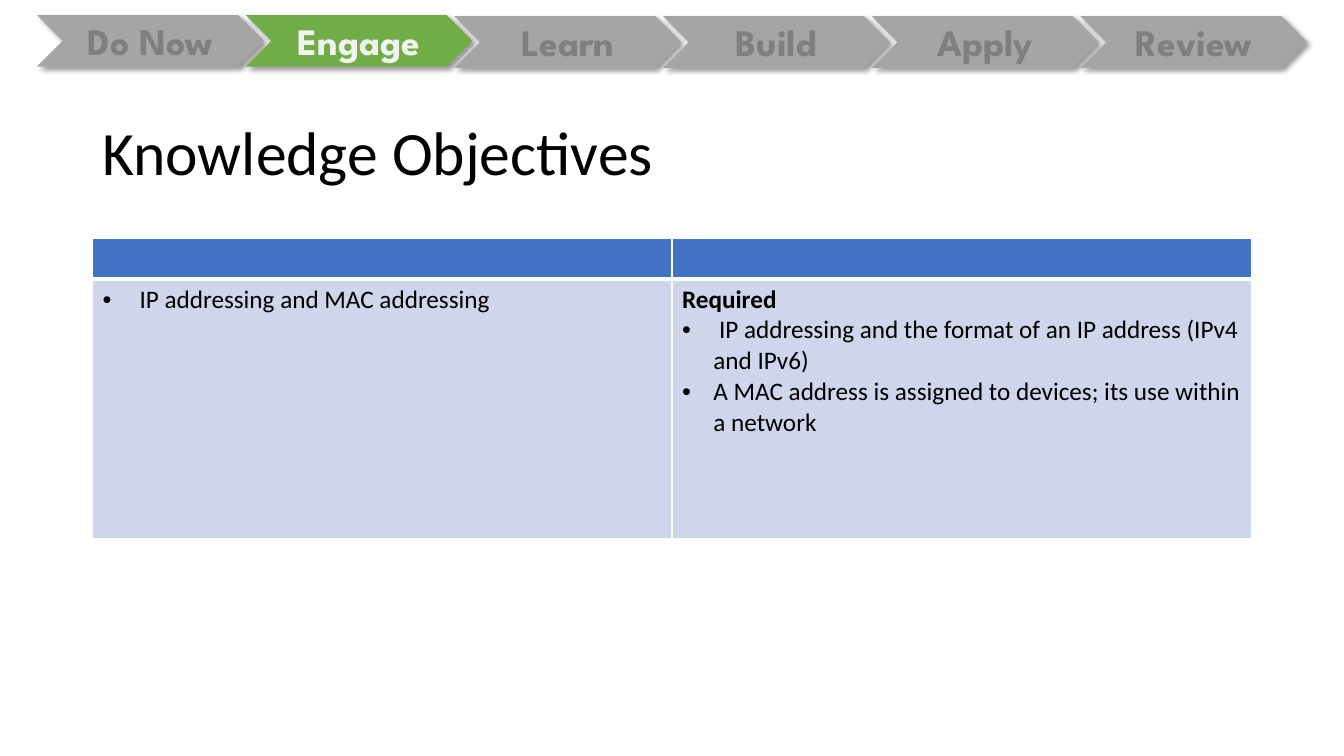
import pptx
import pptx.dml.color
import pptx.enum.shapes
import pptx.enum.text
import pptx.oxml
import pptx.oxml.ns
import pptx.util
from pptx.util import Cm

STAGES = ["Do Now", "Engage", "Learn", "Build", "Apply", "Review"]
CURRENT_STAGE = "Engage"
OBJECTIVES = [" IP addressing and MAC addressing"]
REQUIRED = [
    " IP addressing and the format of an IP address (IPv4 and IPv6)",
    "A MAC address is assigned to devices; its use within a network",
]
NAMESPACE = pptx.oxml.ns.nsdecls("a")


def color(value):
    return pptx.dml.color.RGBColor.from_string(value)


def style_paragraph(paragraph, size, value="000000", name="Calibri", bold=False):
    font = paragraph.font
    font.name, font.size, font.bold = name, pptx.util.Pt(size), bold
    font.color.rgb = color(value)


def add_shadow(shape):
    """Soft shadow cast down and to the right."""
    shape.shadow.inherit = False
    effects = shape._element.spPr.find(pptx.oxml.ns.qn("a:effectLst"))
    effects.append(pptx.oxml.parse_xml(
        f'<a:outerShdw {NAMESPACE} blurRad="50800" dist="38100" dir="2700000" algn="tl" '
        'rotWithShape="0"><a:srgbClr val="000000"><a:alpha val="40000"/></a:srgbClr>'
        '</a:outerShdw>'))


def add_stage(page, label, left, top, current):
    chevron = page.shapes.add_shape(
        pptx.enum.shapes.MSO_SHAPE.CHEVRON, left, top, Cm(5.72), Cm(1.3))
    chevron.fill.solid()
    chevron.fill.fore_color.rgb = color("70AD47" if current else "A5A5A5")
    chevron.line.fill.background()
    add_shadow(chevron)
    frame = chevron.text_frame
    frame.vertical_anchor = pptx.enum.text.MSO_ANCHOR.MIDDLE
    para = frame.paragraphs[0]
    para.text = label
    para.alignment = pptx.enum.text.PP_ALIGN.CENTER
    style_paragraph(para, 26.7, "F2F2F2" if current else "7F7F7F", "League Spartan", True)


def add_title(page, text):
    box = page.shapes.add_textbox(Cm(2.33), Cm(2.08), Cm(29.21), Cm(3.68))
    frame = box.text_frame
    frame.word_wrap = True
    frame.vertical_anchor = pptx.enum.text.MSO_ANCHOR.MIDDLE
    para = frame.paragraphs[0]
    para.text = text
    para.line_spacing = 0.9
    style_paragraph(para, 44)


def style_cell(cell, fill, top_width, bottom_width):
    cell.fill.solid()
    cell.fill.fore_color.rgb = color(fill)
    properties = cell._tc.get_or_add_tcPr()
    # Borders come before the fill
    widths = {"L": 1, "R": 1, "T": top_width, "B": bottom_width}
    for position, (side, width) in enumerate(widths.items()):
        properties.insert(position, pptx.oxml.parse_xml(
            f'<a:ln{side} {NAMESPACE} w="{pptx.util.Pt(width)}"><a:solidFill>'
            f'<a:srgbClr val="FFFFFF"/></a:solidFill></a:ln{side}>'))


def add_bullet(para):
    properties = para._p.get_or_add_pPr()
    indent = Cm(0.79)
    properties.set("marL", str(indent))
    properties.set("indent", str(-indent))
    properties.append(pptx.oxml.parse_xml(
        f'<a:buFont {NAMESPACE} typeface="Arial"/>'))
    properties.append(pptx.oxml.parse_xml(f'<a:buChar {NAMESPACE} char="•"/>'))


def fill_cell(cell, bullets, heading=None):
    lines = ([heading] if heading else []) + bullets
    frame = cell.text_frame
    for number, line in enumerate(lines):
        para = frame.add_paragraph() if number else frame.paragraphs[0]
        para.text = line
        if line != heading:
            add_bullet(para)
        style_paragraph(para, 18, bold=line == heading)


def add_objectives_table(page):
    row_heights = [Cm(1.03), Cm(6.54)]
    frame = page.shapes.add_table(2, 2, Cm(2.33), Cm(6), Cm(29.21), sum(row_heights))
    table = frame.table
    for row, height in zip(table.rows, row_heights):
        row.height = height
    for column in range(2):
        style_cell(table.cell(0, column), "4472C4", 1, 3)
        style_cell(table.cell(1, column), "CFD5EA", 3, 1)
    fill_cell(table.cell(1, 0), OBJECTIVES)
    fill_cell(table.cell(1, 1), REQUIRED, "Required")


def main():
    deck = pptx.Presentation()
    deck.slide_width, deck.slide_height = Cm(33.87), Cm(19.05)
    page = deck.slides.add_slide(deck.slide_layouts[6])

    # Lesson stages across the top
    for number, label in enumerate(STAGES):
        top = Cm(0.38) if number < 2 else Cm(0.41)
        add_stage(page, label, Cm(0.93 + 5.26 * number), top, label == CURRENT_STAGE)

    # Title and objectives
    add_title(page, "Knowledge Objectives")
    add_objectives_table(page)

    deck.save("out.pptx")


if __name__ == "__main__":
    main()
